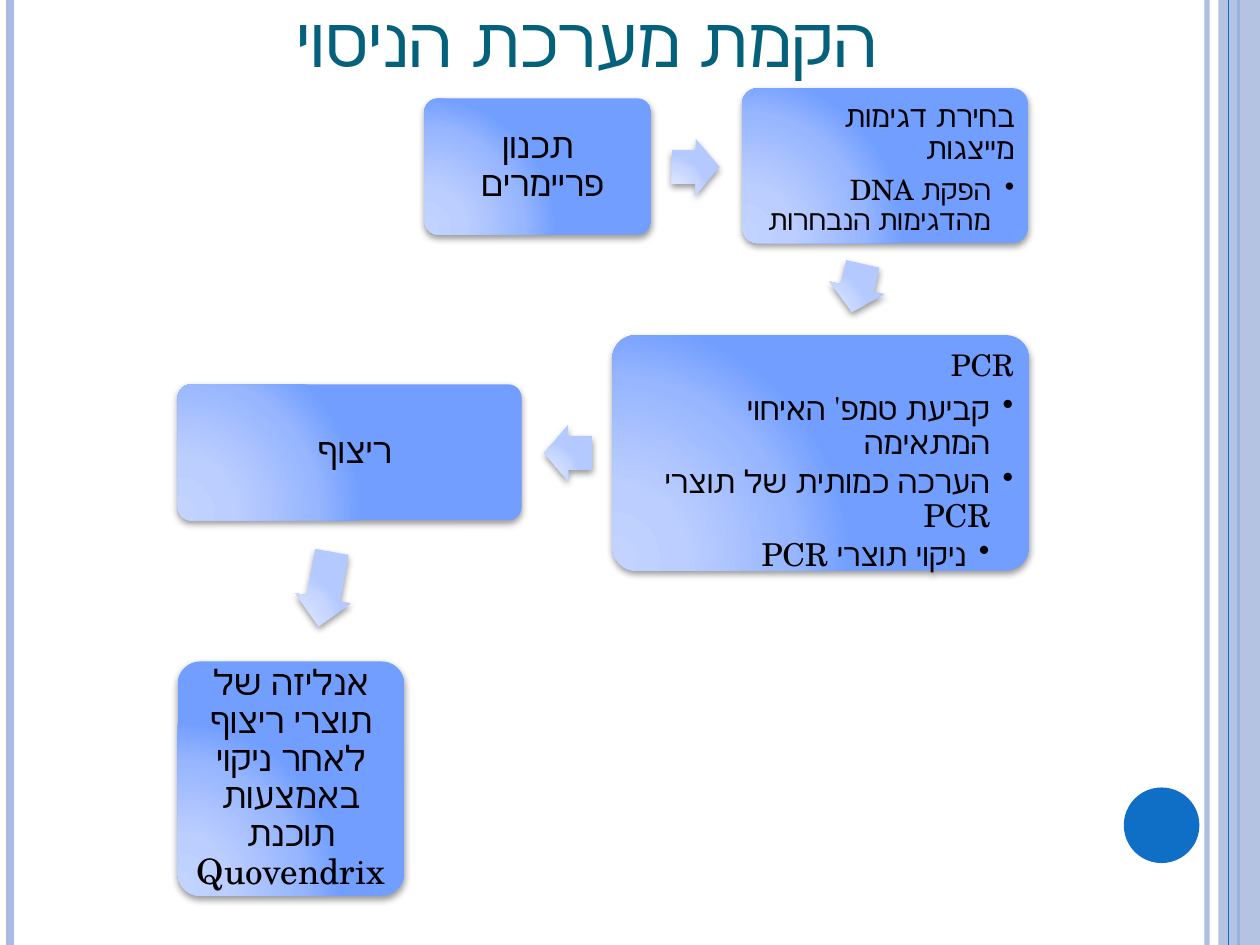
import lxml.etree
import pptx
import pptx.dml.color
import pptx.enum.shapes
import pptx.enum.text
import pptx.oxml.ns
import pptx.util

Pt = pptx.util.Pt
Kind = pptx.enum.shapes.MSO_SHAPE
Align = pptx.enum.text.PP_ALIGN
Anchor = pptx.enum.text.MSO_ANCHOR
qn = pptx.oxml.ns.qn


def color(code):
    return pptx.dml.color.RGBColor.from_string(code)


def add(parent, tag, **attrs):
    node = lxml.etree.SubElement(parent, qn(tag))
    for key, value in attrs.items():
        node.set(key, str(value))
    return node


class Deck:
    face = "TeX Gyre Schola"
    pale = "ABBBDF"
    blue = "0F6FC6"
    ink = "000000"
    teal = "04617B"
    box_fill = ((0, "C2D3FF"), (30, "BCCEFF"), (75, "97B6FF"), (100, "719EFF"))
    arrow_fill = ((0, "DCE5FF"), (30, "D8E3FF"), (75, "C5D5FF"), (100, "B4C9FF"))

    def __init__(self):
        self.show = pptx.Presentation()
        self.show.slide_width = Pt(720)
        self.show.slide_height = Pt(540)
        self.slide = self.show.slides.add_slide(self.show.slide_layouts[5])
        self.shapes = self.slide.shapes

    def fade(self, item, share):
        for node in item._element.spPr.iter(qn("a:srgbClr")):
            add(node, "a:alpha", val=share * 1000)

    def rule(self, left, code, width, share=100):
        line = self.shapes.add_connector(
            pptx.enum.shapes.MSO_CONNECTOR.STRAIGHT, Pt(left), 0, Pt(left), Pt(540))
        line.line.color.rgb = color(code)
        line.line.width = Pt(width)
        if share < 100:
            self.fade(line, share)
        add(line._element.spPr, "a:effectLst")

    def shape(self, kind, place):
        item = self.shapes.add_shape(kind, *map(Pt, place))
        item.line.fill.background()
        item.shadow.inherit = False
        return item

    def plain(self, kind, place, code, share=100):
        item = self.shape(kind, place)
        item.fill.solid()
        item.fill.fore_color.rgb = color(code)
        if share < 100:
            self.fade(item, share)

    def glow(self, item, stops):
        item.fill.gradient()
        grad = item._element.spPr.find(qn("a:gradFill"))
        for node in list(grad):
            grad.remove(node)
        group = add(grad, "a:gsLst")
        for spot, code in stops:
            add(add(group, "a:gs", pos=spot * 1000), "a:srgbClr", val=code)
        ring = add(grad, "a:path", path="circle")
        add(ring, "a:fillToRect", l=5000, t=100000, r=120000, b=10000)
        effects = item._element.spPr.find(qn("a:effectLst"))
        shade = add(effects, "a:outerShdw", blurRad=Pt(4), dist=Pt(2),
                    dir=5400000, rotWithShape=0)
        add(add(shade, "a:srgbClr", val=self.ink), "a:alpha", val=40000)

    def format(self, para, size, code, align):
        para.alignment = align
        para.font.size = Pt(size)
        para.font.name = self.face
        para.font.color.rgb = color(code)
        props = para._p.get_or_add_pPr()
        props.set("rtl", "1")
        chars = props.find(qn("a:defRPr"))
        add(chars, "a:cs", typeface=self.face)
        return props, chars

    def title(self, text, place):
        item = self.shapes.title
        item.left, item.top, item.width, item.height = map(Pt, place)
        frame = item.text_frame
        frame.text = text
        frame.auto_size = pptx.enum.text.MSO_AUTO_SIZE.NONE
        frame.vertical_anchor = Anchor.BOTTOM
        chars = self.format(frame.paragraphs[0], 40, self.teal, Align.CENTER)[1]
        chars.set("cap", "small")
        self.shapes._spTree.append(item._element)

    def box(self, place, rows, listed=False):
        item = self.shape(Kind.ROUNDED_RECTANGLE, place)
        item.adjustments[0] = 0.1
        self.glow(item, self.box_fill)
        frame = item.text_frame
        frame.word_wrap = True
        frame.vertical_anchor = Anchor.TOP if listed else Anchor.MIDDLE
        inset = Pt(5 if listed else 6)
        frame.margin_left = frame.margin_right = inset
        frame.margin_top = frame.margin_bottom = inset
        for rank, (text, size, level) in enumerate(rows):
            para = frame.add_paragraph() if rank else frame.paragraphs[0]
            para.text = text
            para.level = level
            para.line_spacing = 0.9
            para.space_after = Pt(size * (0.15 if level else 0.35))
            props, chars = self.format(
                para, size, self.ink, Align.RIGHT if listed else Align.CENTER)
            if level:
                props.set("marL", str(Pt(13.5 * level)))
                props.set("indent", str(-Pt(13.5)))
                mark = lxml.etree.Element(qn("a:buChar"), char="•")
                chars.addprevious(mark)

    def arrow(self, place, turn=0):
        item = self.shape(Kind.RIGHT_ARROW, place)
        item.adjustments[0] = 0.6
        item.adjustments[1] = 0.5
        item.rotation = turn
        self.glow(item, self.arrow_fill)


def main():
    deck = Deck()
    deck.rule(689.8, deck.pale, 3, 93)
    deck.rule(5.8, deck.pale, 4.5)
    deck.rule(707.8, deck.blue, 1.5)
    deck.plain(Kind.RECTANGLE, (696.2, 0, 23.8, 540), deck.pale, 87)
    deck.rule(702, deck.blue, 0.75)
    deck.plain(Kind.OVAL, (642.2, 450, 43.2, 43.2), deck.blue)
    deck.title("הקמת מערכת הניסוי ", (36, 21.6, 588.2, 28.8))

    deck.box((242.5, 56.2, 129.6, 77.8), [("תכנון פריימרים ", 20, 0)])
    deck.arrow((383.8, 79.2, 27.4, 32.4))
    deck.box((424.1, 50.4, 163.4, 88.6), [
        ("בחירת דגימות מייצגות ", 17, 0),
        ("הפקת DNA מהדגימות הנבחרות ", 16, 1),
    ], listed=True)
    deck.arrow((475.9, 148.3, 28.1, 32.4), 102.8)
    deck.box((349.9, 191.5, 238.3, 134.6), [
        ("PCR", 17, 0),
        ("קביעת טמפ' האיחוי המתאימה", 18, 1),
        ("הערכה כמותית של תוצרי PCR ", 18, 1),
        ("ניקוי תוצרי PCR", 18, 2),
    ], listed=True)
    deck.arrow((311, 242.6, 27.4, 32.4), 180)
    deck.box((101.5, 219.6, 196.6, 77.8), [("ריצוף ", 20, 0)])
    deck.arrow((164.2, 320.4, 43.2, 32.4), 100.1)
    deck.box((101.5, 378, 129.6, 133.9), [
        ("אנליזה של תוצרי ריצוף לאחר ניקוי באמצעות תוכנת Quovendrix", 20, 0),
    ])
    deck.show.save("out.pptx")


if __name__ == "__main__":
    main()
